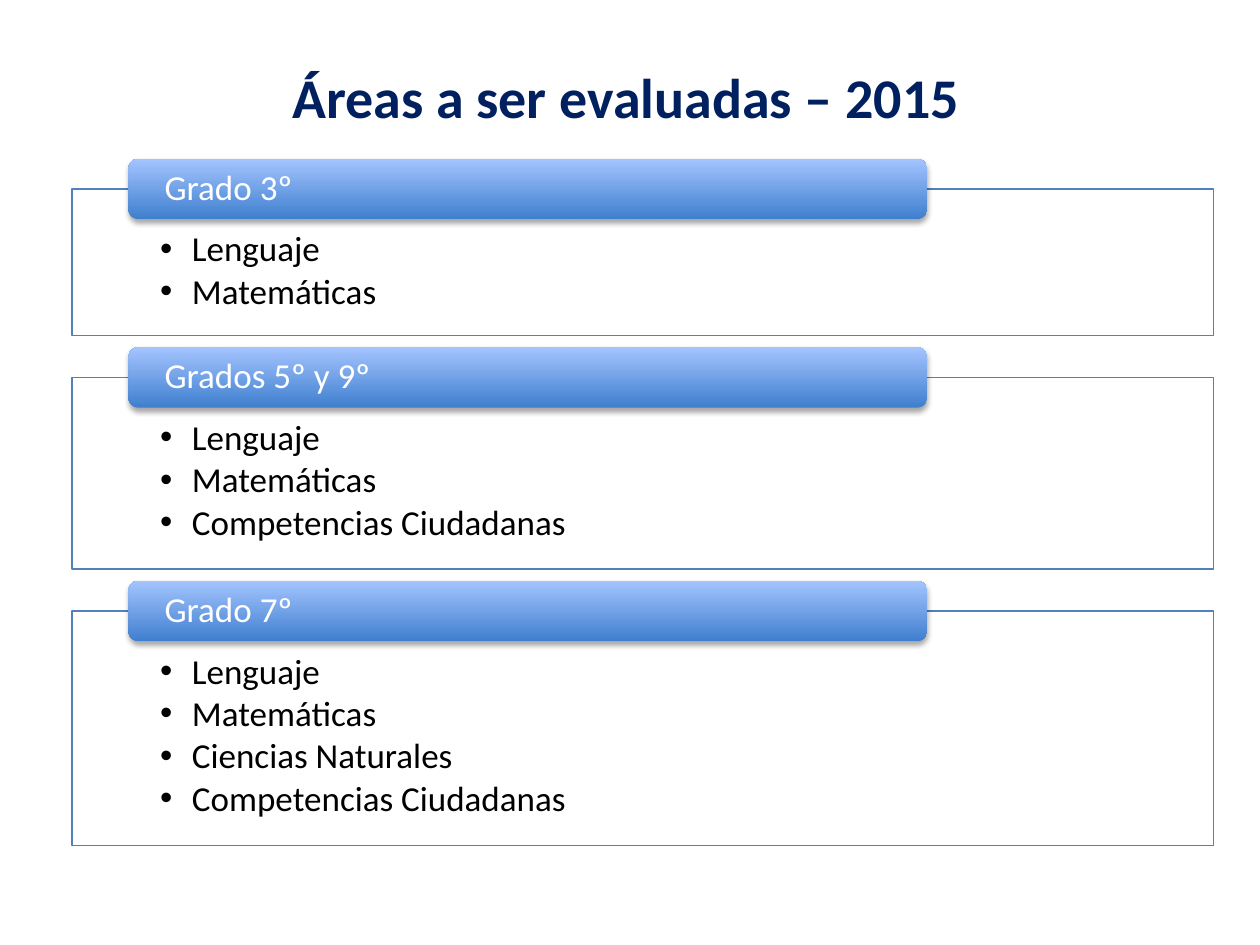
from lxml.etree import SubElement
from pptx import Presentation
from pptx.dml.color import RGBColor
from pptx.enum.shapes import MSO_SHAPE as Shape
from pptx.enum.text import MSO_ANCHOR as Anchor, MSO_AUTO_SIZE as AutoSize, PP_ALIGN as Align
from pptx.oxml.ns import qn
from pptx.util import Cm, Pt

NAVY = RGBColor(0x00, 0x20, 0x60)
BLUE = RGBColor(0x4F, 0x81, 0xBD)
DEEP_BLUE = RGBColor(0x3F, 0x7F, 0xCE)
LIGHT_BLUE = RGBColor(0xA4, 0xC4, 0xFF)
WHITE = RGBColor(0xFF, 0xFF, 0xFF)
BLACK = RGBColor(0x00, 0x00, 0x00)

GRADES = [
    ("Grado 3º", 2.95, ["Lenguaje", "Matemáticas"]),
    ("Grados 5º y 9º", 3.86, ["Lenguaje", "Matemáticas", "Competencias Ciudadanas"]),
    ("Grado 7º", 4.72, ["Lenguaje", "Matemáticas", "Ciencias Naturales", "Competencias Ciudadanas"]),
]
GAP = 0.85
BANNER_RISE = 0.61


def add_span(para, text, size, color, bold=False):
    span = para.add_run()
    span.text = text
    span.font.name = "Calibri"
    span.font.size = Pt(size)
    span.font.bold = bold
    span.font.color.rgb = color


def set_margins(frame, left, top, right, bottom):
    frame.margin_left, frame.margin_top = Cm(left), Cm(top)
    frame.margin_right, frame.margin_bottom = Cm(right), Cm(bottom)
    frame.word_wrap = True


deck = Presentation()
deck.slide_width, deck.slide_height = Cm(25.4), Cm(19.05)
page = deck.slides.add_slide(deck.slide_layouts[5])

title = page.shapes.title
title.left, title.top, title.width, title.height = Cm(5.56), Cm(1.12), Cm(14.12), Cm(1.63)
title.text_frame.word_wrap = False
title.text_frame.auto_size = AutoSize.SHAPE_TO_FIT_TEXT
title_para = title.text_frame.paragraphs[0]
title_para.alignment = Align.CENTER
add_span(title_para, "Áreas a ser evaluadas – 2015", 32, NAVY, True)

top = 3.81
for grade, height, areas in GRADES:
    box = page.shapes.add_shape(Shape.RECTANGLE, Cm(1.45), Cm(top), Cm(23.01), Cm(height))
    box.shadow.inherit = False
    box.fill.solid()
    box.fill.fore_color.rgb = WHITE
    fill_color = box.fill._xPr.find(qn("a:solidFill"))[0]
    SubElement(fill_color, qn("a:alpha"), val="90000")
    box.line.color.rgb = BLUE
    box.line.width = Pt(0.75)
    frame = box.text_frame
    set_margins(frame, 1.78, 0.86, 1.78, 0.41)
    frame.vertical_anchor = Anchor.TOP
    for index, area in enumerate(areas):
        para = frame.add_paragraph() if index else frame.paragraphs[0]
        properties = para._p.get_or_add_pPr()
        properties.set("marL", str(Cm(0.64)))
        properties.set("indent", str(-Cm(0.64)))
        SubElement(properties, qn("a:buFont"), typeface="Arial")
        SubElement(properties, qn("a:buChar"), char="•")
        para.level = 1
        para.alignment = Align.LEFT
        para.line_spacing = 0.9
        para.space_after = Pt(2.6)
        add_span(para, area, 20, BLACK)

    banner = page.shapes.add_shape(
        Shape.ROUNDED_RECTANGLE, Cm(2.59), Cm(top - BANNER_RISE), Cm(16.1), Cm(2 * BANNER_RISE))
    banner.fill.gradient()
    banner.fill.gradient_angle = 90
    for stop, color in zip(banner.fill.gradient_stops, (DEEP_BLUE, LIGHT_BLUE)):
        stop.color.rgb = color
    banner.line.fill.background()
    banner.shadow.inherit = False
    effects = banner._element.spPr.find(qn("a:effectLst"))
    shadow = SubElement(effects, qn("a:outerShdw"), blurRad=str(Pt(3.1)), dist=str(Pt(1.8)),
                        dir="5400000", rotWithShape="0")
    shadow_color = SubElement(shadow, qn("a:srgbClr"), val=str(BLACK))
    SubElement(shadow_color, qn("a:alpha"), val="35000")
    set_margins(banner.text_frame, 0.67, 0, 0.67, 0)
    banner.text_frame.vertical_anchor = Anchor.MIDDLE
    label = banner.text_frame.paragraphs[0]
    label.alignment = Align.LEFT
    label.line_spacing = 0.9
    add_span(label, grade, 20, WHITE)

    top += height + GAP

deck.save("out.pptx")
